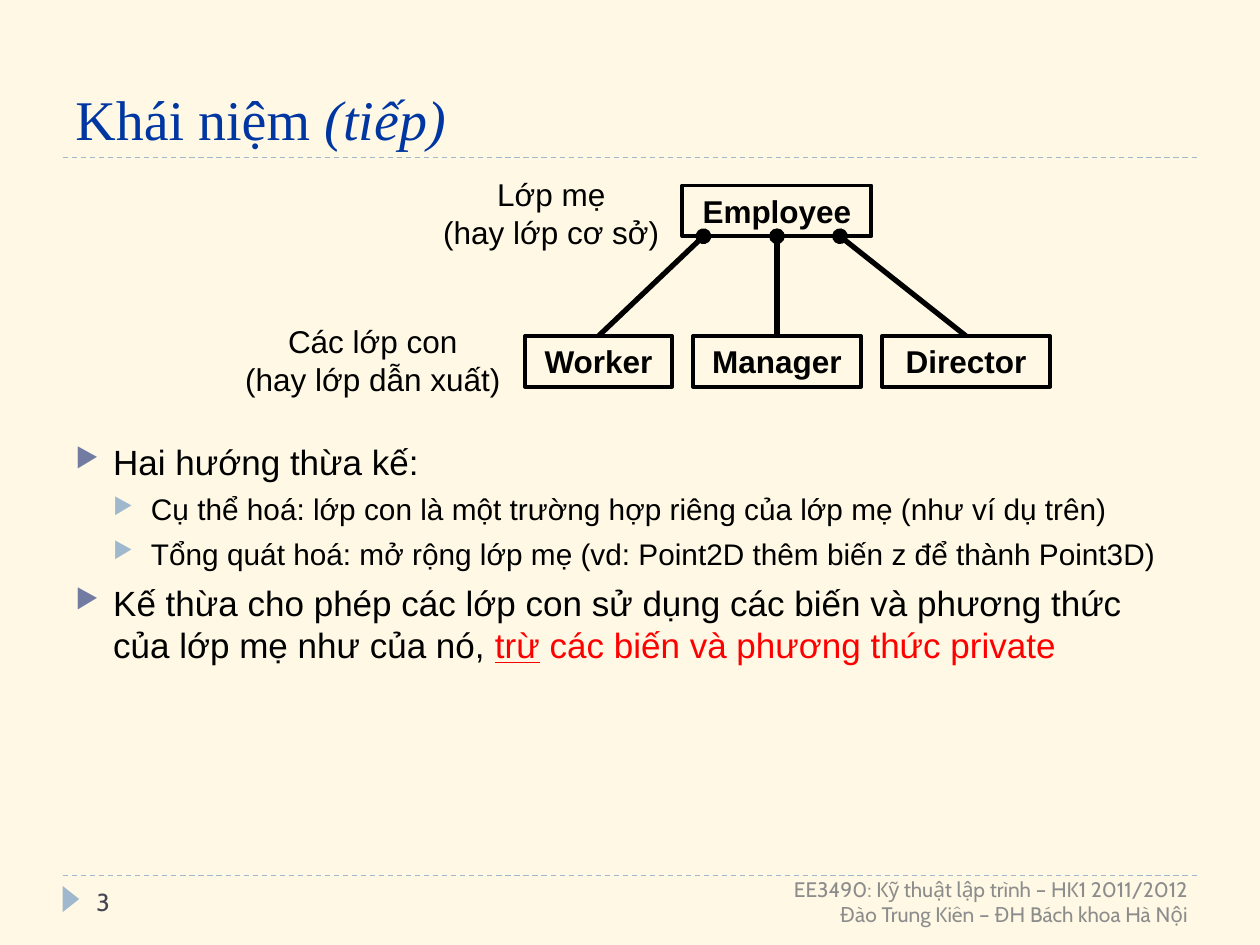
from lxml import etree
from pptx import Presentation
from pptx.dml.color import RGBColor
from pptx.enum.dml import MSO_LINE
from pptx.enum.shapes import MSO_CONNECTOR, MSO_SHAPE
from pptx.enum.text import MSO_ANCHOR, PP_ALIGN
from pptx.oxml.ns import qn
from pptx.util import Pt

CREAM = RGBColor(0xFE, 0xF8, 0xE4)
PALE_BLUE = RGBColor(0x9F, 0xB8, 0xCD)
SLATE_BLUE = RGBColor(0x72, 0x7C, 0xA3)
TITLE_BLUE = RGBColor(0x00, 0x36, 0xA2)
BLACK = RGBColor(0, 0, 0)
RED = RGBColor(0xFF, 0, 0)
DARK_GRAY = RGBColor(0x46, 0x46, 0x53)
GRAY = RGBColor(0x8C, 0x8C, 0x8C)

prs = Presentation()
prs.slide_width, prs.slide_height = Pt(720), Pt(540)
slide = prs.slides.add_slide(prs.slide_layouts[6])
slide.background.fill.solid()
slide.background.fill.fore_color.rgb = CREAM


def add_run(paragraph, text, size, color=BLACK, font="Arial"):
    run = paragraph.add_run()
    run.text = text
    run.font.size, run.font.name = Pt(size), font
    run.font.color.rgb = color
    return run


def add_line(x1, y1, x2, y2, color, width):
    line = slide.shapes.add_connector(
        MSO_CONNECTOR.STRAIGHT, Pt(x1), Pt(y1), Pt(x2), Pt(y2))
    line.line.color.rgb = color
    line.line.width = Pt(width)
    etree.SubElement(line._element.spPr, qn("a:effectLst"))
    return line


# Dashed rules and the footer marker
for y in (90, 500.5):
    add_line(36, y, 684, y, PALE_BLUE, 0.75).line.dash_style = MSO_LINE.DASH

marker = slide.shapes.add_shape(
    MSO_SHAPE.ISOSCELES_TRIANGLE, Pt(33), Pt(509), Pt(15), Pt(9.5))
marker.rotation = 90
marker.shadow.inherit = False
marker.fill.solid()
marker.fill.fore_color.rgb = PALE_BLUE
marker.line.fill.background()

# Title
title = slide.shapes.add_textbox(Pt(36), Pt(12), Pt(648), Pt(78)).text_frame
title.word_wrap = True
title.vertical_anchor = MSO_ANCHOR.BOTTOM
heading = title.paragraphs[0]
add_run(heading, "Khái niệm ", 32, TITLE_BLUE, "Times New Roman")
add_run(heading, "(tiếp)", 32, TITLE_BLUE, "Times New Roman").font.italic = True

# Class diagram: name, left, top, width
classes = [
    ("Employee", 390, 106, 108),
    ("Worker", 300, 192, 84),
    ("Manager", 396, 192, 96),
    ("Director", 504, 192, 96),
]
for name, left, top, width in classes:
    box = slide.shapes.add_shape(
        MSO_SHAPE.RECTANGLE, Pt(left), Pt(top), Pt(width), Pt(29))
    box.shadow.inherit = False
    box.fill.background()
    box.line.color.rgb = BLACK
    box.line.width = Pt(2.25)
    box.text_frame.vertical_anchor = MSO_ANCHOR.MIDDLE
    class_name = box.text_frame.paragraphs[0]
    class_name.alignment = PP_ALIGN.CENTER
    add_run(class_name, name, 18).font.bold = True

for child_x, parent_x in [(342, 402), (444, 444), (552, 480)]:
    link = add_line(child_x, 192, parent_x, 135, BLACK, 3)
    etree.SubElement(link.line._get_or_add_ln(), qn("a:tailEnd"), type="oval")

# Diagram labels and footer: left, top, width, height, alignment, style, lines
captions = [
    (246, 96, 138, 51, PP_ALIGN.CENTER, (18,), ["Lớp mẹ", "(hay lớp cơ sở)"]),
    (132, 180, 162, 51, PP_ALIGN.CENTER, (18,),
     ["Các lớp con", "(hay lớp dẫn xuất)"]),
    (48, 500.5, 156, 29, PP_ALIGN.LEFT, (14, DARK_GRAY, "Cabin"), ["3"]),
    (246, 500.5, 440, 29, PP_ALIGN.RIGHT, (12, GRAY, "Cabin"),
     ["EE3490: Kỹ thuật lập trình – HK1 2011/2012",
      "Đào Trung Kiên – ĐH Bách khoa Hà Nội"]),
]
for left, top, width, height, alignment, style, lines in captions:
    caption = slide.shapes.add_textbox(
        Pt(left), Pt(top), Pt(width), Pt(height)).text_frame
    caption.word_wrap = True
    caption.vertical_anchor = MSO_ANCHOR.MIDDLE
    if alignment == PP_ALIGN.CENTER:
        caption.margin_left = caption.margin_right = 0
    for i, text in enumerate(lines):
        paragraph = caption.add_paragraph() if i else caption.paragraphs[0]
        paragraph.alignment = alignment
        add_run(paragraph, text, *style)

# Bulleted notes: level, runs of (text, colour, underlined)
notes = [
    (0, [("Hai hướng thừa kế:", BLACK, False)]),
    (1, [("Cụ thể hoá: lớp con là một trường hợp riêng của lớp mẹ "
          "(như ví dụ trên)", BLACK, False)]),
    (1, [("Tổng quát hoá: mở rộng lớp mẹ (vd: Point2D thêm biến z "
          "để thành Point3D)", BLACK, False)]),
    (0, [("Kế thừa cho phép các lớp con sử dụng các biến và phương thức "
          "của lớp mẹ như của nó, ", BLACK, False),
         ("trừ", RED, True),
         (" các biến và phương thức private", RED, False)]),
]
# Text size, space before and bullet colour for each level
level_styles = [(20, 6, SLATE_BLUE), (17, 5, PALE_BLUE)]

body = slide.shapes.add_textbox(Pt(36), Pt(248), Pt(648), Pt(236)).text_frame
body.word_wrap = True
for i, (level, runs) in enumerate(notes):
    size, space, bullet_color = level_styles[level]
    paragraph = body.add_paragraph() if i else body.paragraphs[0]
    paragraph.level = level
    if i:
        paragraph.space_before = Pt(space)
    pPr = paragraph._p.get_or_add_pPr()
    pPr.set("marL", str(Pt(21.6 * (level + 1))))
    pPr.set("indent", str(Pt(-21.6)))
    bullet_fill = etree.SubElement(pPr, qn("a:buClr"))
    etree.SubElement(bullet_fill, qn("a:srgbClr"), val=str(bullet_color))
    etree.SubElement(pPr, qn("a:buSzPct"), val="76000")
    etree.SubElement(pPr, qn("a:buChar"), char="▶")
    for text, color, underlined in runs:
        run = add_run(paragraph, text, size, color)
        if underlined:
            run.font.underline = True

prs.save("out.pptx")
